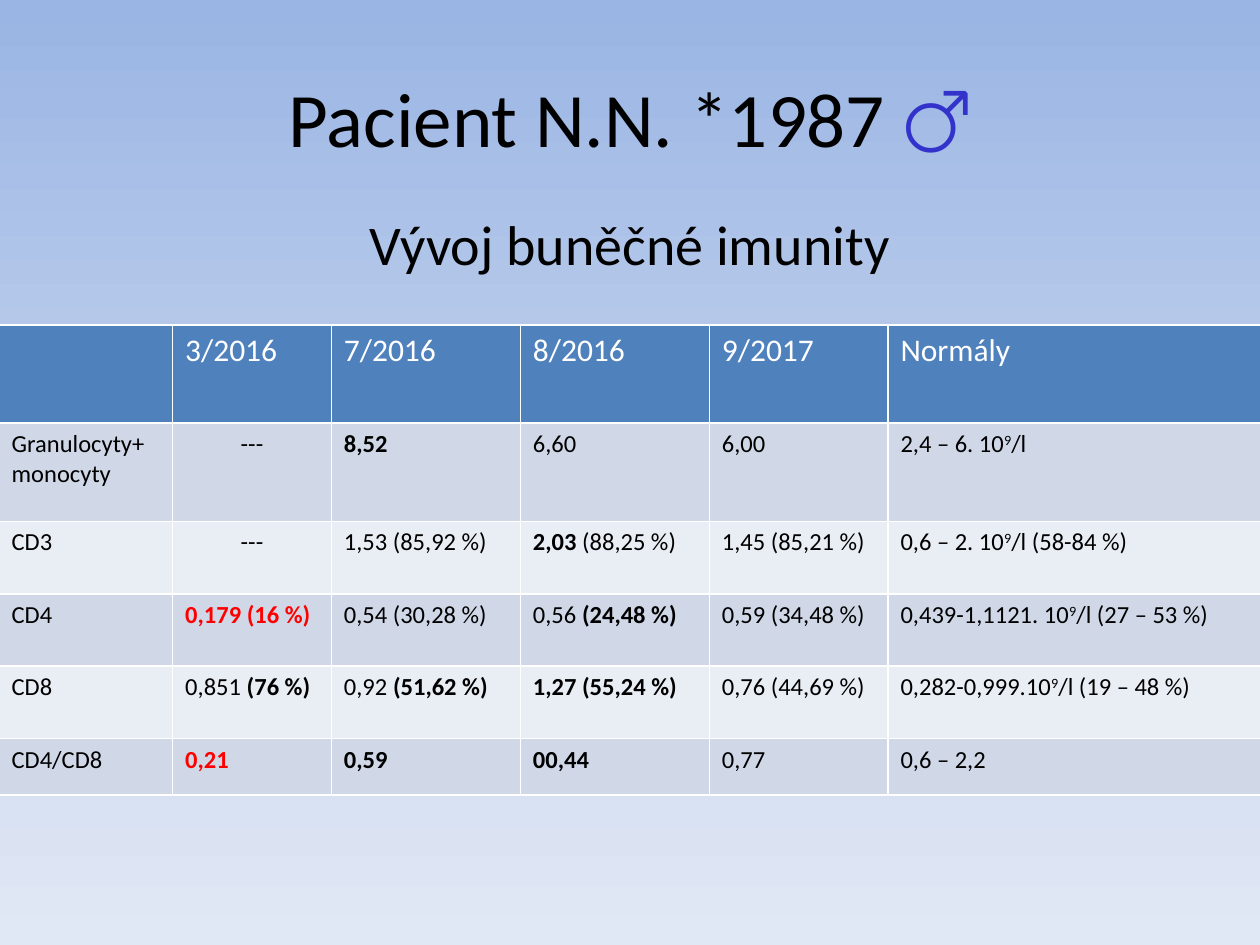
import copy

import lxml.etree
import pptx
import pptx.dml.color
import pptx.enum.text
import pptx.oxml.ns
import pptx.util

Cm = pptx.util.Cm
RGBColor = pptx.dml.color.RGBColor
CENTER = pptx.enum.text.PP_ALIGN.CENTER

BLACK = RGBColor(0x00, 0x00, 0x00)
WHITE = RGBColor(0xFF, 0xFF, 0xFF)
RED = RGBColor(0xFF, 0x00, 0x00)
SYMBOL_BLUE = RGBColor(0x33, 0x33, 0xCC)
HEADER_BLUE = RGBColor(0x4F, 0x81, 0xBD)
BAND_DARK = RGBColor(0xD0, 0xD8, 0xE8)
BAND_LIGHT = RGBColor(0xE9, 0xED, 0xF4)
BACKGROUND_STOPS = [
    (0, RGBColor(0x9A, 0xB5, 0xE4)),
    (0.5, RGBColor(0xC2, 0xD1, 0xED)),
    (1, RGBColor(0xE1, 0xE8, 0xF5)),
]


def add_run(paragraph, text, size, color, bold=False, superscript=False):
    run = paragraph.add_run()
    run.text = text
    run.font.name = "Calibri"
    run.font.size = pptx.util.Pt(size)
    run.font.bold = bold
    run.font.color.rgb = color
    if superscript:
        run.font._element.set("baseline", "30000")


def set_borders(cell, color, width):
    """Draw the same solid line on all four sides of a table cell."""
    properties = cell._tc.get_or_add_tcPr()
    for position, side in enumerate(("lnL", "lnR", "lnT", "lnB")):
        line = lxml.etree.Element(pptx.oxml.ns.qn("a:" + side), w=str(width))
        fill = lxml.etree.SubElement(line, pptx.oxml.ns.qn("a:solidFill"))
        lxml.etree.SubElement(fill, pptx.oxml.ns.qn("a:srgbClr"), val=str(color))
        properties.insert(position, line)


presentation = pptx.Presentation()
presentation.slide_width = Cm(25.4)
presentation.slide_height = Cm(19.05)
slide = presentation.slides.add_slide(presentation.slide_layouts[6])

# Background gradient, from top to bottom
background = slide.background.fill
background.gradient()
background.gradient_angle = 270
stop_list = slide.element.xpath(".//a:gsLst")[0]
stop_list.append(copy.deepcopy(stop_list[-1]))
for stop, (position, color) in zip(background.gradient_stops, BACKGROUND_STOPS):
    stop.position = position
    stop.color.rgb = color

# Title and subtitle
title = slide.shapes.add_textbox(Cm(1.27), Cm(0.76), Cm(22.86), Cm(3.18))
title.text_frame.word_wrap = True
title.text_frame.vertical_anchor = pptx.enum.text.MSO_ANCHOR.MIDDLE
paragraph = title.text_frame.paragraphs[0]
paragraph.alignment = CENTER
add_run(paragraph, "Pacient N.N. *1987 ", 44, BLACK)
add_run(paragraph, "♂", 44, SYMBOL_BLUE)

subtitle = slide.shapes.add_textbox(Cm(1.27), Cm(3.12), Cm(22.86), Cm(13.89))
subtitle.text_frame.word_wrap = True
subtitle.text_frame.margin_top = Cm(1.1)
paragraph = subtitle.text_frame.paragraphs[0]
paragraph.alignment = CENTER
add_run(paragraph, "Vývoj buněčné imunity", 32, BLACK)

# Table: a cell is a list of runs, each a text and its style
PLAIN = {"color": BLACK}
BOLD = {"color": BLACK, "bold": True}
ALERT = {"color": RED, "bold": True}
NINTH_POWER = ("9", {"color": BLACK, "superscript": True})
HEADERS = ["", "3/2016", "7/2016", "8/2016", "9/2017", "Normály"]
BODY = [
    [[("Granulocyty+ monocyty", PLAIN)], [("---", PLAIN)], [("8,52", BOLD)],
     [("6,60", PLAIN)], [("6,00", PLAIN)],
     [("2,4 – 6. 10", PLAIN), NINTH_POWER, ("/l", PLAIN)]],
    [[("CD3", PLAIN)], [("---", PLAIN)], [("1,53 (85,92 %)", PLAIN)],
     [("2,03", BOLD), (" (88,25 %)", PLAIN)], [("1,45 (85,21 %)", PLAIN)],
     [("0,6 – 2. 10", PLAIN), NINTH_POWER, ("/l (58-84 %)", PLAIN)]],
    [[("CD4", PLAIN)], [("0,179 (16 %)", ALERT)], [("0,54 (30,28 %)", PLAIN)],
     [("0,56 ", PLAIN), ("(24,48 %)", BOLD)], [("0,59 (34,48 %)", PLAIN)],
     [("0,439-1,1121. 10", PLAIN), NINTH_POWER, ("/l (27 – 53 %)", PLAIN)]],
    [[("CD8", PLAIN)], [("0,851 ", PLAIN), ("(76 %)", BOLD)],
     [("0,92 ", PLAIN), ("(51,62 %)", BOLD)], [("1,27 (55,24 %)", BOLD)],
     [("0,76 (44,69 %)", PLAIN)],
     [("0,282-0,999.10", PLAIN), NINTH_POWER, ("/l (19 – 48 %)", PLAIN)]],
    [[("CD4/CD8", PLAIN)], [("0,21", ALERT)], [("0,59", BOLD)],
     [("00,44", BOLD)], [("0,77", PLAIN)], [("0,6 – 2,2", PLAIN)]],
]
COLUMN_WIDTHS = [3.5, 3.2, 3.81, 3.81, 3.6, 7.52]
ROW_HEIGHTS = [1.98, 1.98, 1.46, 1.46, 1.46, 1.14]

table = slide.shapes.add_table(
    len(ROW_HEIGHTS), len(COLUMN_WIDTHS), Cm(-0.02), Cm(6.55),
    Cm(sum(COLUMN_WIDTHS)), Cm(sum(ROW_HEIGHTS)),
).table
for column, width in zip(table.columns, COLUMN_WIDTHS):
    column.width = Cm(width)
for row, height in zip(table.rows, ROW_HEIGHTS):
    row.height = Cm(height)

header_row = [[(text, {"color": WHITE})] if text else [] for text in HEADERS]
for row_index, row_cells in enumerate([header_row] + BODY):
    if row_index == 0:
        fill_color, size = HEADER_BLUE, 18
    else:
        fill_color, size = (BAND_DARK if row_index % 2 else BAND_LIGHT), 14
    for column_index, runs in enumerate(row_cells):
        cell = table.cell(row_index, column_index)
        cell.fill.solid()
        cell.fill.fore_color.rgb = fill_color
        set_borders(cell, WHITE, pptx.util.Pt(1))
        paragraph = cell.text_frame.paragraphs[0]
        for text, style in runs:
            add_run(paragraph, text, size, **style)
            if text == "---":
                paragraph.alignment = CENTER

presentation.save("out.pptx")
